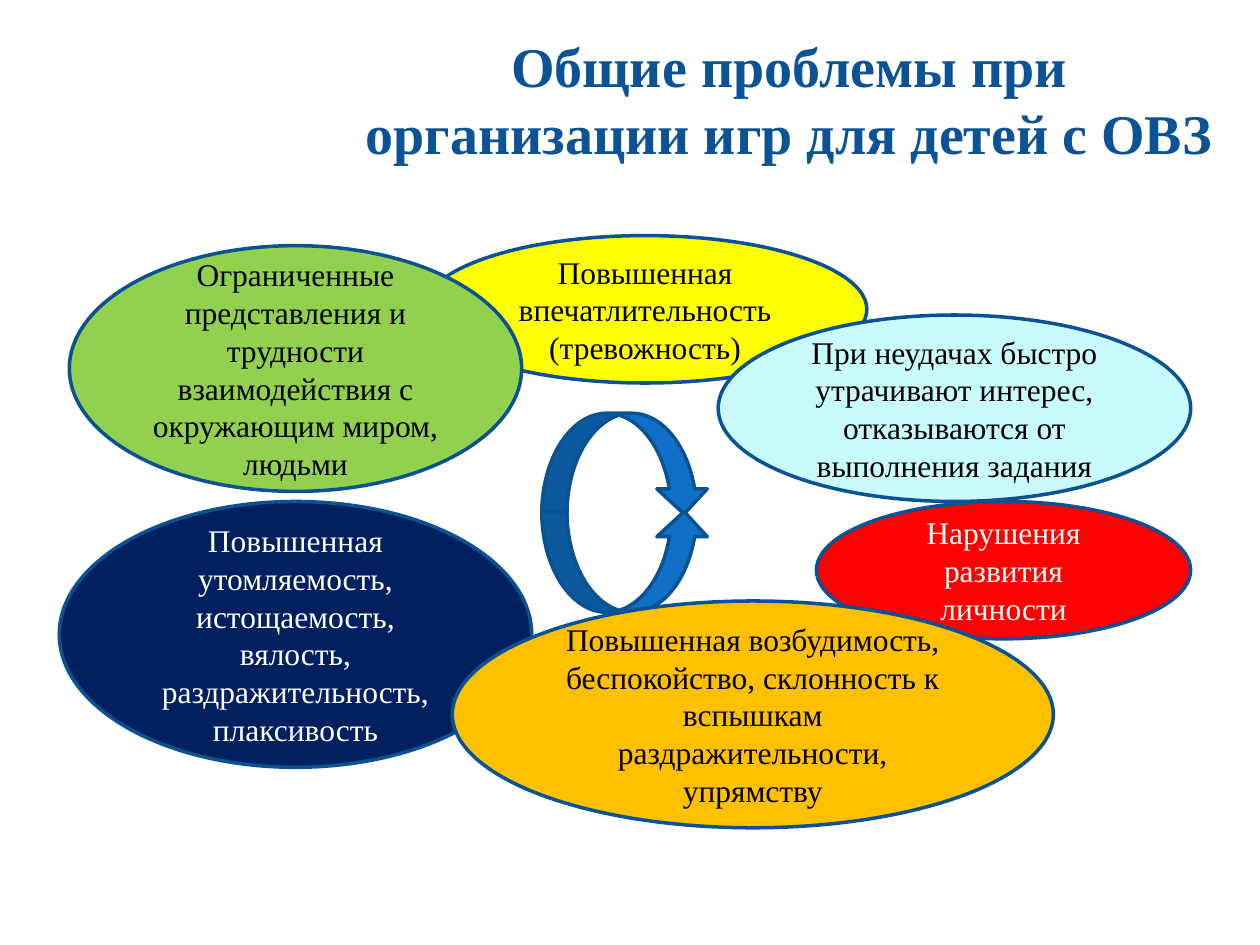
import pptx
import pptx.util
import pptx.dml.color
import pptx.enum.shapes
import pptx.enum.text

RGBColor = pptx.dml.color.RGBColor
SHAPE = pptx.enum.shapes.MSO_SHAPE
Inches, Pt = pptx.util.Inches, pptx.util.Pt

FONT = "Times New Roman"
TITLE_BLUE = RGBColor(0x0B, 0x53, 0x94)
OUTLINE = RGBColor(0x0B, 0x52, 0x92)
ARROW_BLUE = RGBColor(0x0F, 0x6F, 0xC6)
YELLOW = RGBColor(0xFF, 0xFF, 0x00)
CYAN = RGBColor(0xC9, 0xFA, 0xFC)
GREEN = RGBColor(0x92, 0xD0, 0x50)
NAVY = RGBColor(0x00, 0x20, 0x60)
RED = RGBColor(0xFF, 0x00, 0x00)
ORANGE = RGBColor(0xFF, 0xC0, 0x00)
BLACK = RGBColor(0x00, 0x00, 0x00)
WHITE = RGBColor(0xFF, 0xFF, 0xFF)

TITLE = "Общие проблемы при организации игр для детей с ОВЗ"
TITLE_BOX = (2.72, 0.05, 7.09, 1.46)

ARROWS = [
    (SHAPE.CURVED_DOWN_ARROW, (4.3, 3.28, 1.33, 0.8)),
    (SHAPE.CURVED_UP_ARROW, (4.3, 4.06, 1.33, 0.8)),
]

# Back to front: text, box in inches, fill, text colour
PROBLEMS = [
    ("Повышенная впечатлительность (тревожность)",
     (3.36, 1.87, 3.52, 1.17), YELLOW, BLACK),
    ("При неудачах быстро утрачивают интерес, отказываются от выполнения задания",
     (5.7, 2.5, 3.75, 1.48), CYAN, BLACK),
    ("Ограниченные представления и трудности взаимодействия с окружающим миром, людьми",
     (0.55, 1.95, 3.59, 1.95), GREEN, BLACK),
    ("Повышенная утомляемость, истощаемость, вялость, раздражительность, плаксивость",
     (0.47, 3.98, 3.75, 2.11), NAVY, WHITE),
    ("Нарушения развития личности",
     (6.48, 3.98, 2.97, 1.09), RED, WHITE),
    ("Повышенная возбудимость, беспокойство, склонность к вспышкам раздражительности, упрямству",
     (3.59, 4.77, 4.77, 1.8), ORANGE, BLACK),
]


def write(sp, text, size, color, bold=False):
    tf = sp.text_frame
    tf.text = text
    tf.word_wrap = True
    tf.auto_size = pptx.enum.text.MSO_AUTO_SIZE.NONE
    tf.vertical_anchor = pptx.enum.text.MSO_ANCHOR.MIDDLE
    p = tf.paragraphs[0]
    p.alignment = pptx.enum.text.PP_ALIGN.CENTER
    font = p.runs[0].font
    font.name, font.size, font.bold = FONT, Pt(size), bold
    font.color.rgb = color


def add_outlined(s, kind, box, fill):
    sp = s.shapes.add_shape(kind, *map(Inches, box))
    sp.shadow.inherit = False
    sp.fill.solid()
    sp.fill.fore_color.rgb = fill
    sp.line.color.rgb = OUTLINE
    sp.line.width = Pt(2)
    return sp


def main():
    prs = pptx.Presentation()
    prs.slide_width, prs.slide_height = Inches(10), Inches(7.5)
    s = prs.slides.add_slide(prs.slide_layouts[5])

    title = s.shapes.title
    title.left, title.top, title.width, title.height = map(Inches, TITLE_BOX)
    write(title, TITLE, 32, TITLE_BLUE, bold=True)

    for kind, box in ARROWS:
        add_outlined(s, kind, box, ARROW_BLUE)
    for text, box, fill, color in PROBLEMS:
        write(add_outlined(s, SHAPE.OVAL, box, fill), text, 18, color)

    prs.save("out.pptx")


if __name__ == "__main__":
    main()
